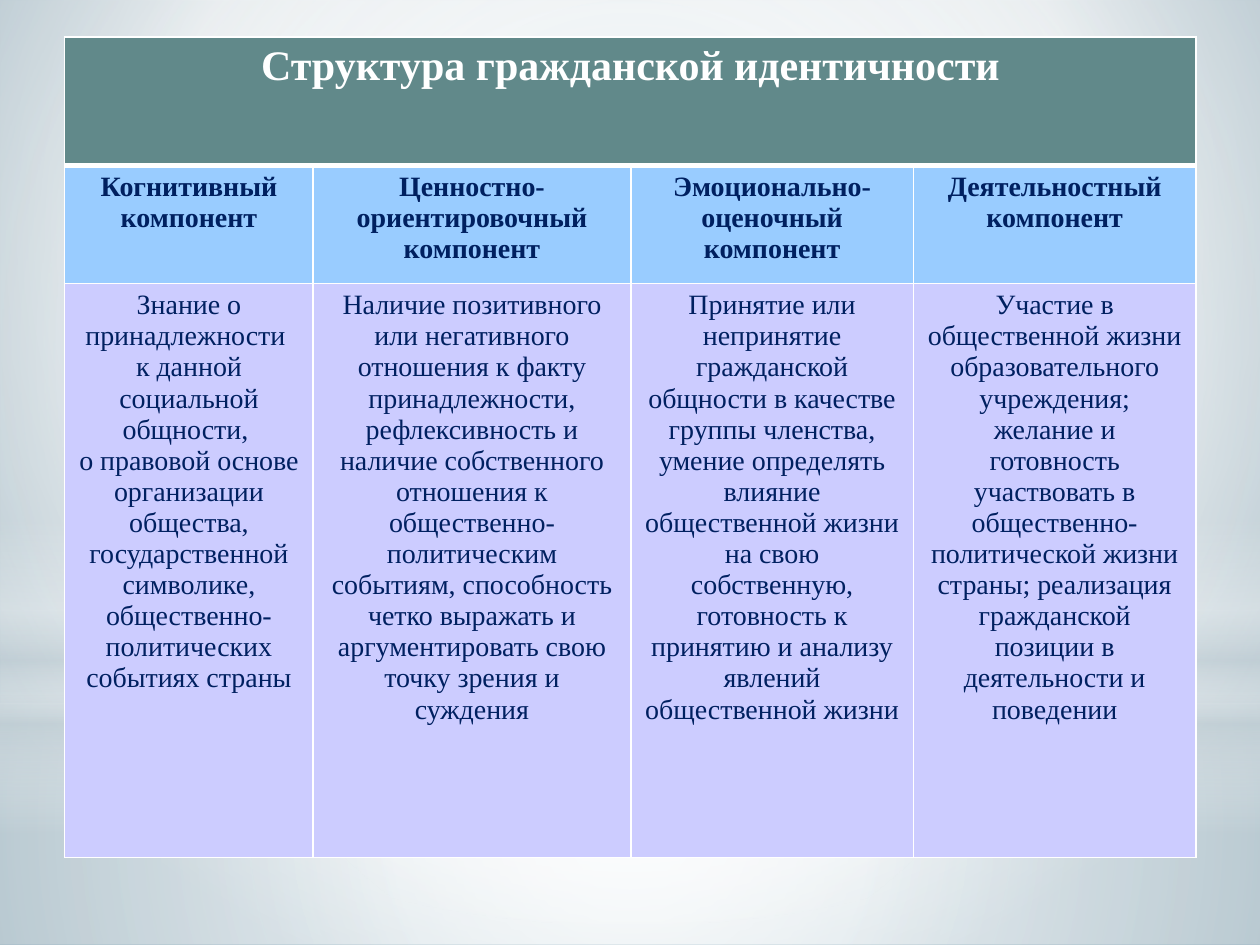
from lxml import etree
from pptx import Presentation
from pptx.dml.color import RGBColor
from pptx.enum import shapes, text
from pptx.oxml import ns
from pptx.util import Pt

THEME = {
    "font": "Times New Roman", "border": "FFFFFF",
    "title": {"size": 24, "bold": True, "color": "FFFFFF", "fill": "61898A"},
    "heading": {"size": 16, "bold": True, "color": "002060", "fill": "99CCFF"},
    "body": {"size": 16, "bold": False, "color": "002060", "fill": "CCCCFF"},
    "white": "FFFFFF", "mist": "C5D1D7", "sky": "B8CAD3", "steel": "8FAEBD",
}

TITLE = "Структура гражданской идентичности"
COMPONENTS = [
    ("Когнитивный компонент", [
        "Знание о принадлежности ",
        "к данной социальной общности, ",
        "о правовой основе организации общества, государственной символике, "
        "общественно-политических событиях страны"]),
    ("Ценностно-ориентировочный компонент", [
        "Наличие позитивного или негативного отношения к факту принадлежности, "
        "рефлексивность и наличие собственного отношения к",
        "общественно-политическим событиям, способность четко выражать и "
        "аргументировать свою точку зрения и суждения"]),
    ("Эмоционально-оценочный компонент", [
        "Принятие или непринятие гражданской общности в качестве группы членства, "
        "умение определять влияние общественной жизни на свою собственную, "
        "готовность к принятию и анализу явлений общественной жизни"]),
    ("Деятельностный компонент", [
        "Участие в общественной жизни образовательного учреждения; желание и "
        "готовность участвовать в общественно-политической жизни страны; "
        "реализация гражданской позиции в деятельности и поведении"]),
]

WIDTH, HEIGHT = 720, 540
HORIZON = 402
TABLE_LEFT, TABLE_TOP = 37, 21
COLUMN_WIDTHS = [142, 181.5, 161.5, 161.5]
ROW_HEIGHTS = [73.5, 67.5, 328]

# Gradient stops: position %, theme colour, opacity %.
BACKDROP = [(0, "sky", 100), (60, "white", 100), (100, "steel", 100)]
BACKDROP_FOCUS = (20, 10, 20, 60)
CENTRE = (50, 50, 50, 50)
RECTANGLE, OVAL = shapes.MSO_SHAPE.RECTANGLE, shapes.MSO_SHAPE.OVAL
# Preset, top, height, stops, focus (None means a vertical linear gradient).
LIGHTS = [
    (RECTANGLE, HORIZON, HEIGHT - HORIZON,
     [(0, "white", 91), (37, "white", 76), (100, "mist", 79)], CENTRE),
    (RECTANGLE, 0, HORIZON,
     [(0, "white", 89), (48, "white", 62), (100, "mist", 79)], CENTRE),
    (RECTANGLE, 296.5, 180,
     [(0, "white", 0), (29, "white", 30), (45, "mist", 40),
      (55, "white", 26), (65, "mist", 60), (100, "white", 0)], None),
    (OVAL, 126, HORIZON, [(0, "white", 100), (56, "white", 0)], CENTRE),
]


def add_child(parent, tag, **attributes):
    child = etree.SubElement(parent, ns.qn(tag))
    for name, value in attributes.items():
        child.set(name, str(value))
    return child


def set_gradient(fill, root, stops, focus):
    """Put a gradient with opacity where the fill of root stands."""
    fill.background()
    no_fill = next(root.iter(ns.qn("a:noFill")))
    gradient = etree.Element(ns.qn("a:gradFill"), rotWithShape="1")
    stop_list = add_child(gradient, "a:gsLst")
    for position, color, opacity in stops:
        stop = add_child(stop_list, "a:gs", pos=position * 1000)
        rgb = add_child(stop, "a:srgbClr", val=THEME[color])
        if opacity < 100:
            add_child(rgb, "a:alpha", val=opacity * 1000)
    if focus:
        path = add_child(gradient, "a:path", path="circle")
        edges = {side: edge * 1000 for side, edge in zip("ltrb", focus)}
        add_child(path, "a:fillToRect", **edges)
    else:
        add_child(gradient, "a:lin", ang=90 * 60000, scaled=0)
    no_fill.getparent().replace(no_fill, gradient)


def add_light(slide, preset, top, height, stops, focus):
    shape = slide.shapes.add_shape(preset, 0, Pt(top), Pt(WIDTH), Pt(height))
    shape.shadow.inherit = False
    set_gradient(shape.fill, shape._element, stops, focus)
    shape.line.fill.background()


def set_borders(cell, widths):
    properties = cell._tc.get_or_add_tcPr()
    for side, width in zip("LRTB", widths):
        line = add_child(properties, f"a:ln{side}", w=Pt(width))
        add_child(add_child(line, "a:solidFill"), "a:srgbClr", val=THEME["border"])


def fill_cell(cell, paragraphs, style, spacing=0):
    cell.fill.solid()
    cell.fill.fore_color.rgb = RGBColor.from_string(style["fill"])
    frame = cell.text_frame
    for index, words in enumerate(paragraphs):
        paragraph = frame.add_paragraph() if index else frame.paragraphs[0]
        paragraph.alignment = text.PP_ALIGN.CENTER
        paragraph.space_before = paragraph.space_after = Pt(spacing)
        run = paragraph.add_run()
        run.text = words
        run.font.name = THEME["font"]
        run.font.size = Pt(style["size"])
        run.font.bold = style["bold"]
        run.font.color.rgb = RGBColor.from_string(style["color"])


def add_component_table(slide):
    table = slide.shapes.add_table(
        len(ROW_HEIGHTS), len(COLUMN_WIDTHS), Pt(TABLE_LEFT), Pt(TABLE_TOP),
        Pt(sum(COLUMN_WIDTHS)), Pt(sum(ROW_HEIGHTS))).table
    for column, width in zip(table.columns, COLUMN_WIDTHS):
        column.width = Pt(width)
    for index, (row, height) in enumerate(zip(table.rows, ROW_HEIGHTS)):
        row.height = Pt(height)
        for cell in row.cells:
            set_borders(cell, (1, 1, 3 if index == 1 else 1, 3 if index == 0 else 1))
    table.cell(0, 0).merge(table.cell(0, len(COLUMN_WIDTHS) - 1))
    fill_cell(table.cell(0, 0), [TITLE], THEME["title"], spacing=12)
    for index, (heading, body) in enumerate(COMPONENTS):
        fill_cell(table.cell(1, index), [heading], THEME["heading"])
        fill_cell(table.cell(2, index), body, THEME["body"])


def main():
    presentation = Presentation()
    presentation.slide_width, presentation.slide_height = Pt(WIDTH), Pt(HEIGHT)
    slide = presentation.slides.add_slide(presentation.slide_layouts[6])
    set_gradient(slide.background.fill, slide._element, BACKDROP, BACKDROP_FOCUS)
    for light in LIGHTS:
        add_light(slide, *light)
    add_component_table(slide)
    presentation.save("out.pptx")


if __name__ == "__main__":
    main()
